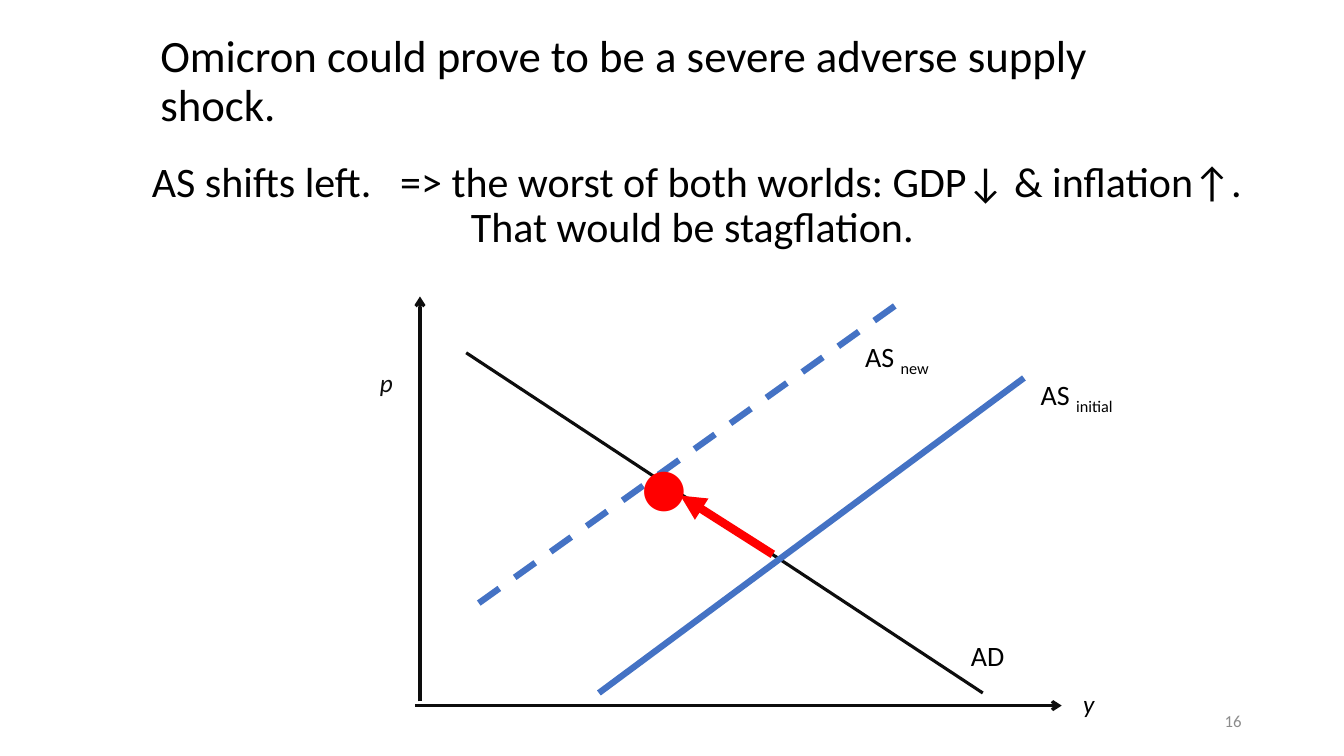
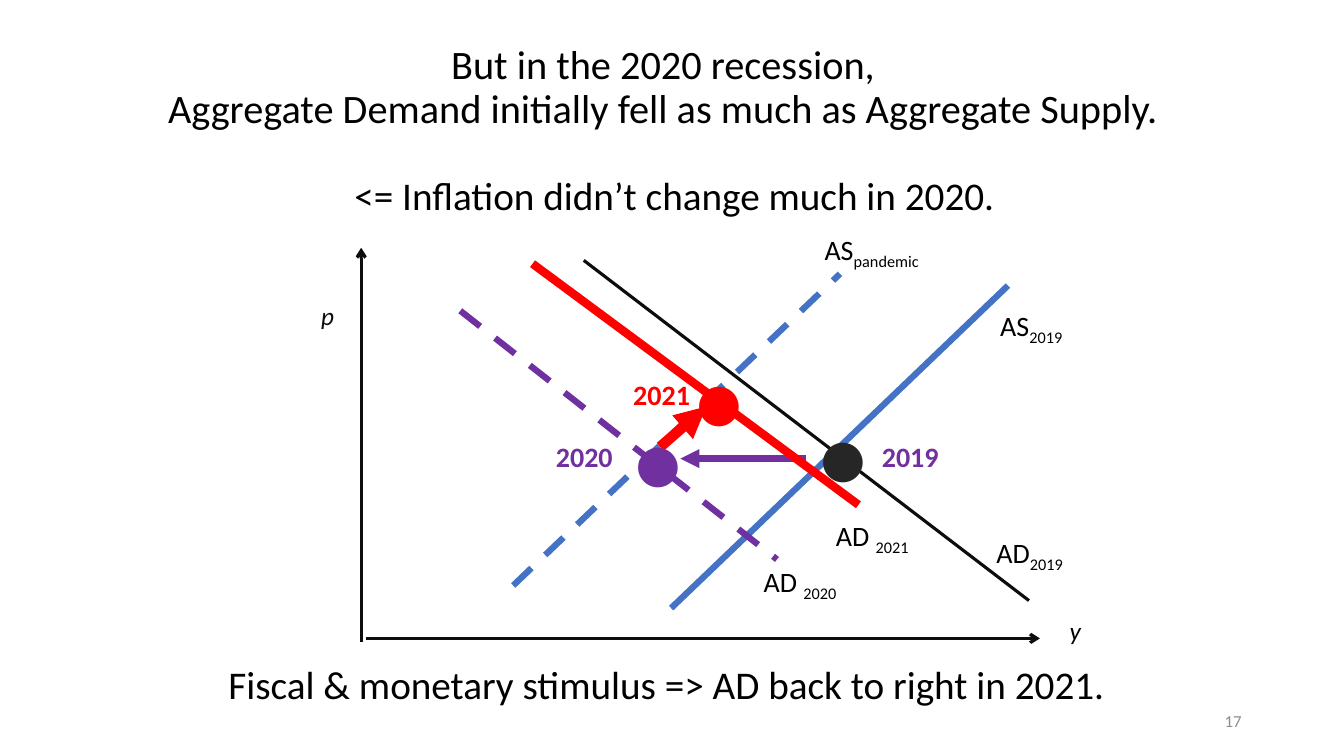
from collections import namedtuple

from lxml import etree
from pptx import Presentation
from pptx import util as u
from pptx.dml.color import RGBColor
from pptx.enum import dml, shapes, text
from pptx.oxml import ns

COLUMNS, ROWS = 160, 90
CELL = u.Inches(13.33) // COLUMNS

BLACK = RGBColor(0x00, 0x00, 0x00)
INK = RGBColor(0x0D, 0x0D, 0x0D)
CHARCOAL = RGBColor(0x26, 0x26, 0x26)
GRAY = RGBColor(0x8C, 0x8C, 0x8C)
BLUE = RGBColor(0x44, 0x72, 0xC4)
PURPLE = RGBColor(0x70, 0x30, 0xA0)
RED = RGBColor(0xFF, 0x00, 0x00)

FONT = "Calibri"
LEFT, CENTER, RIGHT = text.PP_ALIGN.LEFT, text.PP_ALIGN.CENTER, text.PP_ALIGN.RIGHT
TOP, MIDDLE = text.MSO_ANCHOR.TOP, text.MSO_ANCHOR.MIDDLE
SUBSCRIPT = {"baseline": "-25000"}
WIDE_GAP = {"spc": "1360"}

TITLE = {"size": 32, "anchor": MIDDLE, "spacing": 0.9}
BODY = {"size": 30, "align": CENTER, "spacing": 0.9}
STATEMENT = {"size": 28}
AXIS_NAME = {"size": 18, "align": CENTER, "anchor": MIDDLE, "italic": True}
CURVE_NAME = {"size": 20, "align": CENTER, "anchor": MIDDLE}
YEAR = {"size": 20, "bold": True, "wrap": False}
DOT = {"size": 80, "wrap": False}
FOOTER = {"size": 12, "align": RIGHT, "anchor": MIDDLE, "color": GRAY}

Box = namedtuple("Box", "left top width height")
Curve = namedtuple("Curve", "start end color width dashed head", defaults=(False, None))
Label = namedtuple("Label", "box spans")
Mark = namedtuple("Mark", "left top color")
Year = namedtuple("Year", "left top name color")

TITLE_BOX = Box(17.9, 2.3, 126.8, 15)
RECESSION_TITLE_BOX = Box(15.7, 3, 126.5, 15)
NUMBER_BOX = Box(113, 83.4, 36, 4.8)
DOT_WIDTH, DOT_HEIGHT = 9.12, 17.4
YEAR_WIDTH, YEAR_HEIGHT = 9.24, 5.28


def cells(*counts):
    return [round(count * CELL) for count in counts]


def inside(box, left, top, width, height):
    return Box(box.left + left, box.top + top, width, height)


def add_text(page, box, spans, size, color=BLACK, align=LEFT, anchor=TOP,
             spacing=1.0, wrap=True, bold=False, italic=False):
    frame = page.shapes.add_textbox(*cells(*box)).text_frame
    para = frame.paragraphs[0]
    for target, values in (
        (frame, {"word_wrap": wrap, "vertical_anchor": anchor}),
        (para, {"alignment": align, "line_spacing": spacing}),
    ):
        for name, value in values.items():
            setattr(target, name, value)
    style = {"name": FONT, "size": u.Pt(size), "bold": bold, "italic": italic}
    for words, extras in spans:
        for index, line in enumerate(words.split("\n")):
            if index:
                para.add_line_break()
            span = para.add_run()
            span.text = line
            for name, value in style.items():
                setattr(span.font, name, value)
            span.font.color.rgb = color
            for name, value in extras.items():
                span.font._element.set(name, value)


def plain(words):
    return [(words, {})]


def named(base, index):
    return [(base, {}), (index, SUBSCRIPT)]


def add_curve(page, box, curve):
    ends = [
        coordinate
        for x, y in (curve.start, curve.end)
        for coordinate in cells(box.left + x, box.top + y)
    ]
    line = page.shapes.add_connector(shapes.MSO_CONNECTOR.STRAIGHT, *ends)
    line.line.color.rgb = curve.color
    line.line.width = u.Pt(curve.width)
    if curve.dashed:
        line.line.dash_style = dml.MSO_LINE.DASH
    properties = line._element.spPr
    if curve.head:
        outline = properties.find(ns.qn("a:ln"))
        etree.SubElement(outline, ns.qn("a:tailEnd"), type=curve.head)
    etree.SubElement(properties, ns.qn("a:effectLst"))


def add_graph(page, box, axes, price, output, labels, curves, dots, years=()):
    add_text(page, inside(box, *price, 8, 7), plain("p"), color=INK, **AXIS_NAME)
    add_text(page, inside(box, *output, 8, 8), plain("y"), **AXIS_NAME)
    for label in labels:
        add_text(page, inside(box, *label.box, 6), label.spans, **CURVE_NAME)
    for start, end in axes:
        add_curve(page, box, Curve(start, end, INK, 2.25, head="arrow"))
    for curve in curves:
        add_curve(page, box, curve)
    for dot in dots:
        place = inside(box, dot.left, dot.top, DOT_WIDTH, DOT_HEIGHT)
        add_text(page, place, plain("•"), color=dot.color, **DOT)
    for year in years:
        place = inside(box, year.left, year.top, YEAR_WIDTH, YEAR_HEIGHT)
        add_text(page, place, plain(year.name), color=year.color, **YEAR)


def add_page(deck, number, box, title, **changes):
    page = deck.slides.add_slide(deck.slide_layouts[6])
    add_text(page, box, plain(title), **{**TITLE, **changes})
    add_text(page, NUMBER_BOX, plain(str(number)), **FOOTER)
    return page


def supply_shock(deck):
    page = add_page(deck, 16, TITLE_BOX,
                    "Omicron could prove to be a severe adverse supply shock.")
    add_text(page, Box(12.5, 18.6, 141, 14.5), [
        ("AS shifts left.", {}),
        (" ", WIDE_GAP),
        ("=> the worst of both worlds: GDP↓ & inflation↑. That would be stagflation. ", {}),
    ], **BODY)
    add_graph(
        page, Box(50, 35, 76.4, 49),
        axes=[((-0.56, 49), (76.4, 49)), ((0, 48.5), (0, 0.3))],
        price=(-8, 7),
        output=(75.6, 44.7),
        labels=[
            Label((60.2, 40, 14.76), plain("AD")),
            Label((68.4, 9.2, 20), named("AS ", "initial ")),
            Label((47, 4.7, 20), named("AS ", "new ")),
        ],
        curves=[
            Curve((5.5, 7), (67, 47.5), INK, 2.25),
            Curve((21.3, 47.5), (71.9, 10), BLUE, 4.5),
            Curve((42, 31), (31, 24), RED, 6, head="triangle"),
            Curve((7, 36.8), (58.1, 0.3), BLUE, 4.5, dashed=True),
        ],
        dots=[Mark(24.6, 13.4, RED)],
    )


def recession(deck):
    page = add_page(
        deck, 17, RECESSION_TITLE_BOX,
        "But in the 2020 recession,\n"
        "Aggregate Demand initially fell as much as Aggregate Supply.",
        size=28.8, align=CENTER)
    add_text(page, Box(41, 19.8, 79, 7.2),
             plain("<= Inflation didn’t change much in 2020."), **STATEMENT)
    add_graph(
        page, Box(43, 29.5, 80.8, 46.5),
        axes=[((0.6, 46.5), (80.8, 46.5)), ((0, 46.9), (0, 0))],
        price=(-8, 4.5),
        output=(81, 41.5),
        labels=[
            Label((72.2, 33.5, 14.76), named("AD", "2019")),
            Label((70, 6.5, 20), named("AS", "2019 ")),
            Label((51, -2.5, 20), named("AS", "pandemic ")),
            Label((45.1, 37, 14.28), named("AD ", "2020")),
            Label((53.7, 31.5, 14.28), named("AD ", "2021")),
        ],
        curves=[
            Curve((26.5, 1.5), (79.5, 42), INK, 2.25),
            Curve((36.9, 42.9), (77, 4.5), BLUE, 4.5),
            Curve((52.9, 25.1), (38, 25.1), PURPLE, 4.5, head="triangle"),
            Curve((18.1, 40.2), (57, 3.1), BLUE, 4.5, dashed=True),
            Curve((11.8, 7.5), (49.5, 37.1), PURPLE, 4.5, dashed=True),
            Curve((20.4, 1.9), (59.2, 30.6), RED, 6),
            Curve((35.6, 23.7), (41.1, 18.9), RED, 7.5, head="triangle"),
        ],
        dots=[
            Mark(52.9, 15.5, CHARCOAL),
            Mark(30.9, 16.1, PURPLE),
            Mark(38.2, 8.8, RED),
        ],
        years=[
            Year(22, 22.2, "2020", PURPLE),
            Year(31.2, 14.9, "2021", RED),
            Year(60.8, 22.2, "2019", PURPLE),
        ],
    )
    add_text(page, Box(26, 78, 108, 6.8),
             plain("Fiscal & monetary stimulus => AD back to right in 2021."),
             wrap=False, **STATEMENT)


def main():
    deck = Presentation()
    deck.slide_width, deck.slide_height = u.Inches(13.33), CELL * ROWS
    supply_shock(deck)
    recession(deck)
    deck.save("out.pptx")


if __name__ == "__main__":
    main()
